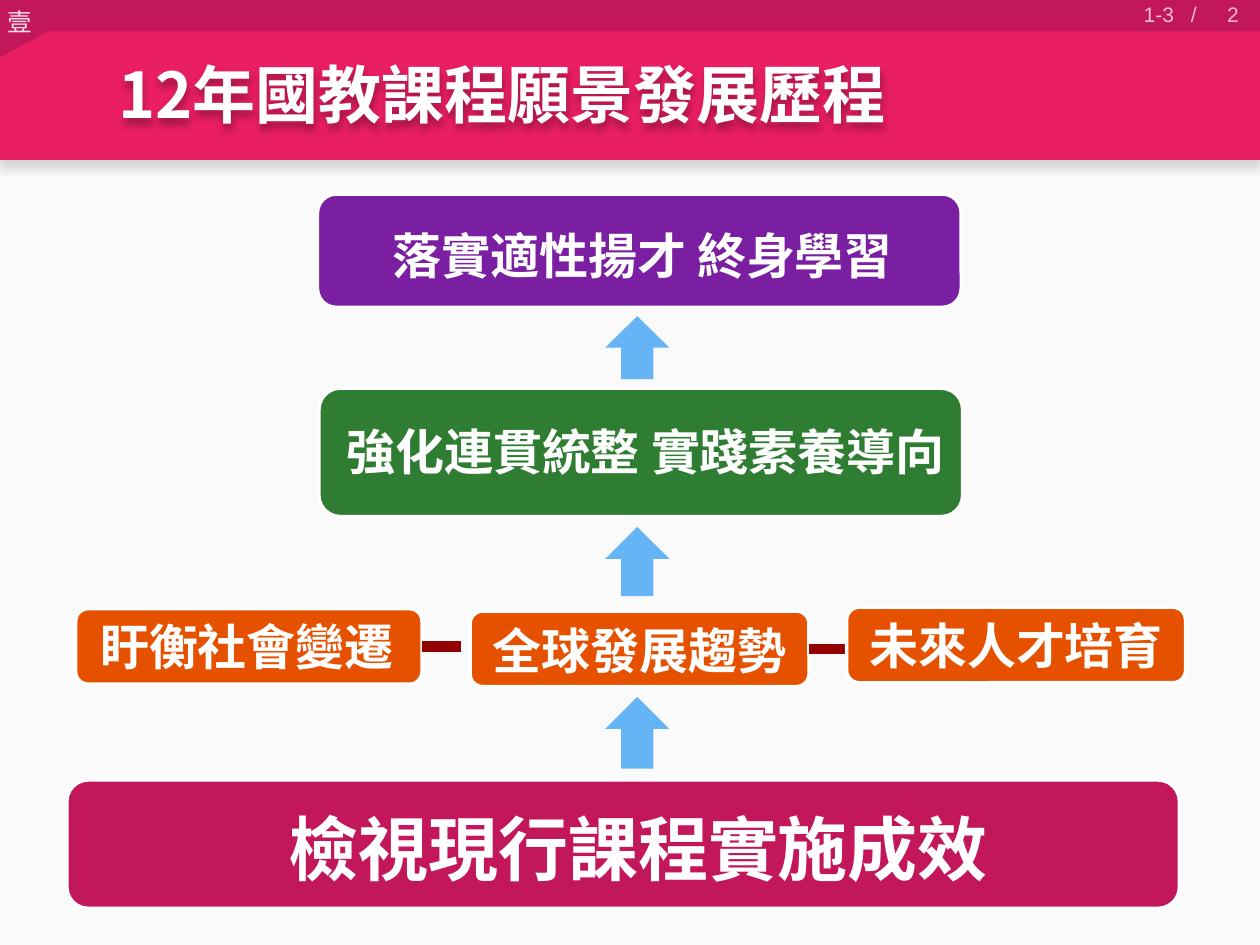
import pptx
import pptx.dml.color
import pptx.enum.shapes
import pptx.enum.text
import pptx.oxml
import pptx.oxml.ns
import pptx.util

Pt = pptx.util.Pt
Shape = pptx.enum.shapes.MSO_SHAPE
Anchor = pptx.enum.text.MSO_ANCHOR
Align = pptx.enum.text.PP_ALIGN
qn = pptx.oxml.ns.qn

COLOURS = {
    "paper": "FAFAFA", "pink": "E91E63", "crimson": "C2185B",
    "orange": "E65100", "green": "2E7D32", "purple": "7B1FA2",
    "arrow": "65B5F6", "link": "920000", "white": "FFFFFF",
    "blush": "FCE4EC", "number": "F8BBD0", "section": "F9BFD2",
}
CHINESE = "Noto Sans CJK SC"
INSET = 9.36


def colour(name):
    return pptx.dml.color.RGBColor.from_string(COLOURS[name])


def paint(shape, fill, outline=None):
    shape.shadow.inherit = False
    shape.fill.solid()
    shape.fill.fore_color.rgb = colour(fill)
    if outline:
        shape.line.color.rgb = colour(outline)
        shape.line.width = Pt(2)
    else:
        shape.line.fill.background()


def add_block(page, kind, area, fill, outline=None):
    shape = page.shapes.add_shape(kind, *map(Pt, area))
    paint(shape, fill, outline)
    return shape


def add_shadow(shape, blur, distance, alpha):
    shape.shadow.inherit = False
    effects = shape.element.spPr.find(qn("a:effectLst"))
    shadow = pptx.oxml.parse_xml(
        '<a:outerShdw xmlns:a="http://schemas.openxmlformats.org/drawingml/2006/main" '
        f'blurRad="{Pt(blur)}" dist="{Pt(distance)}" dir="5400000" algn="t" rotWithShape="0">'
        f'<a:srgbClr val="000000"><a:alpha val="{alpha * 1000}"/></a:srgbClr></a:outerShdw>')
    effects.append(shadow)


def write(shape, text, size, ink="white", font=CHINESE, bold=True,
          align=Align.CENTER, anchor=Anchor.MIDDLE, inset=None, wrap=True):
    frame = shape.text_frame
    frame.word_wrap = wrap
    frame.auto_size = pptx.enum.text.MSO_AUTO_SIZE.NONE
    frame.vertical_anchor = anchor
    if inset is not None:
        frame.margin_left = frame.margin_right = Pt(inset)
        frame.margin_top = frame.margin_bottom = Pt(inset)
    para = frame.paragraphs[0]
    para.alignment = align
    span = para.add_run()
    span.text = text
    span.font.size = Pt(size)
    span.font.bold = bold
    span.font.color.rgb = colour(ink)
    span.font.name = font
    latin = span.font._element.find(qn("a:latin"))
    east_asian = pptx.oxml.parse_xml(
        '<a:ea xmlns:a="http://schemas.openxmlformats.org/drawingml/2006/main" '
        f'typeface="{font}"/>')
    latin.addnext(east_asian)
    return para


def add_text(page, area, text, size, **style):
    box = page.shapes.add_textbox(*map(Pt, area))
    return write(box, text, size, **style)


def add_stage(page, area, fill, text_area, text, size=28, align=Align.CENTER):
    block = add_block(page, Shape.ROUNDED_RECTANGLE, area, fill, "white")
    para = add_text(page, text_area, text, size, align=align, inset=INSET)
    return block, para


def add_link(page, block, end):
    height = block.top + block.height // 2
    link = page.shapes.add_connector(
        pptx.enum.shapes.MSO_CONNECTOR.STRAIGHT,
        block.left + block.width, height, Pt(end), height)
    link.begin_connect(block, 3)
    link.line.color.rgb = colour("link")
    link.line.width = Pt(6)
    link.element.spPr.append(pptx.oxml.parse_xml(
        '<a:effectLst xmlns:a="http://schemas.openxmlformats.org/drawingml/2006/main"/>'))


def add_header(page):
    add_block(page, Shape.RECTANGLE, (-0.7, 31.7, 722, 508.3), "paper")
    band = add_block(page, Shape.RECTANGLE, (-0.7, 0, 721, 91.4), "pink")
    add_shadow(band, 6, 4, 15)
    add_block(page, Shape.RECTANGLE, (-0.7, -1.4, 721, 19.4), "crimson")
    builder = page.shapes.build_freeform(Pt(-0.7), Pt(18))
    builder.add_line_segments([(Pt(-0.7), Pt(33.1)), (Pt(27.4), Pt(18))])
    paint(builder.convert_to_shape(), "crimson")
    add_text(page, (-2.9, 0.7, 28.8, 24.5), "壹", 14, ink="blush", bold=False,
             align=Align.LEFT, anchor=Anchor.TOP, wrap=False)


def add_title(page):
    title = page.shapes.title
    title.left, title.top, title.width, title.height = map(Pt, (60.5, 15.1, 659.5, 76.3))
    write(title, "12年國教課程願景發展歷程", 36, align=Align.LEFT)
    add_shadow(title, 4, 3, 30)
    title.element.getparent().append(title.element)


def add_page_number(page):
    add_text(page, (547.2, -6.5, 167.8, 28.8), "2", 12, ink="number",
             font="Arial", bold=False, align=Align.RIGHT)
    para = add_text(page, (646.5, -2.9, 48.3, 21.6), "1-3\t/", 12, ink="section",
                    font="Arial", bold=False, align=Align.LEFT, anchor=Anchor.TOP)
    tabs = pptx.oxml.parse_xml(
        '<a:tabLst xmlns:a="http://schemas.openxmlformats.org/drawingml/2006/main">'
        f'<a:tab pos="{Pt(27)}" algn="l"/></a:tabLst>')
    para._p.get_or_add_pPr().append(tabs)


def add_stages(page):
    society, para = add_stage(page, (43.2, 347.8, 198, 43.2), "orange",
                              (46.8, 347.8, 188.6, 46.8), "盱衡社會變遷")
    para.line_spacing = 0.9
    add_link(page, society, 263.5)
    world = add_block(page, Shape.ROUNDED_RECTANGLE, (268.6, 349.2, 193.7, 43.2),
                      "orange", "white")
    write(world, "全球發展趨勢", 28, anchor=Anchor.TOP)
    add_link(page, world, 487.4)
    add_stage(page, (38.2, 445.7, 635.8, 73.4), "crimson",
              (155.5, 454.3, 432.7, 59.8), "檢視現行課程實施成效", 40, Align.LEFT)
    add_stage(page, (483.8, 347, 193.7, 43.2), "orange",
              (487.4, 344.9, 187.9, 46.8), "未來人才培育", align=Align.LEFT)
    add_stage(page, (182.2, 221.8, 367.9, 73.4), "green",
              (188.6, 224.6, 370.1, 66.2), "強化連貫統整 實踐素養導向", align=Align.LEFT)
    add_stage(page, (181.4, 110.9, 367.9, 64.8), "purple",
              (191.5, 120.2, 351.4, 51.1), "落實適性揚才 終身學習")
    for top, height in ((398.2, 41), (301, 39.6), (180.7, 36)):
        add_block(page, Shape.UP_ARROW, (345.8, top, 36.7, height), "arrow")


def main():
    deck = pptx.Presentation()
    deck.slide_width, deck.slide_height = Pt(720), Pt(540)
    page = deck.slides.add_slide(deck.slide_layouts[5])
    add_header(page)
    add_stages(page)
    add_page_number(page)
    add_title(page)
    deck.save("out.pptx")


if __name__ == "__main__":
    main()
